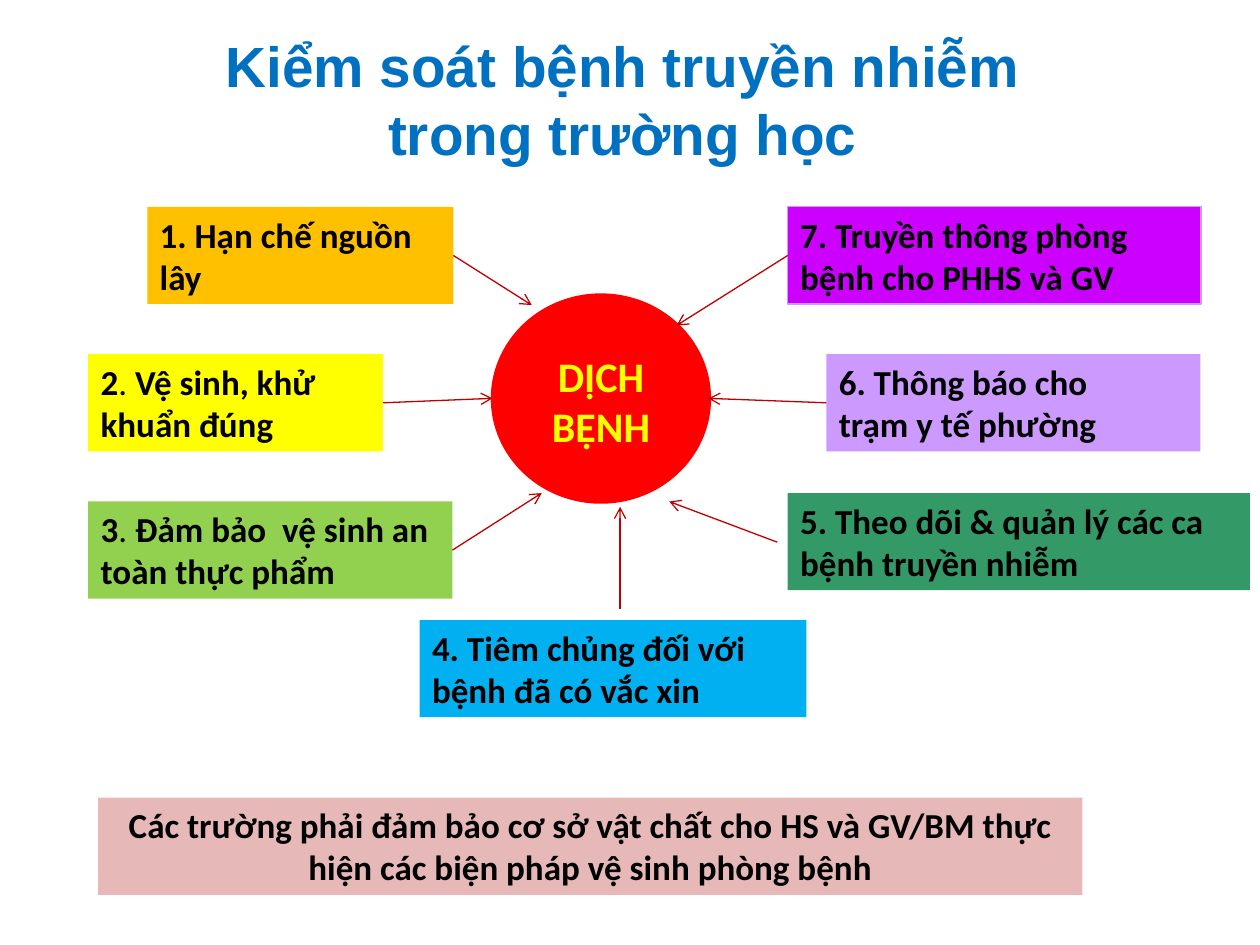
from dataclasses import dataclass

from lxml import etree
from pptx import Presentation
from pptx import util as u
from pptx.dml.color import RGBColor
from pptx.enum import shapes, text
from pptx.oxml.ns import qn


@dataclass(frozen=True)
class Theme:
    title_font: str = "Arial"
    body_font: str = "Calibri"
    title_size: float = 32.4
    hub_size: int = 24
    body_size: int = 20
    title: str = "0070C0"
    ink: str = "000000"
    hub: str = "FF0000"
    hub_text: str = "FFFF00"
    arrow: str = "C00000"
    outline: str = "CC99FF"
    footer: str = "E6B9B8"


THEME = Theme()
CARD_HEIGHT = 1.96
RIGHT, LEFT = 3, 1
LINE_BREAK = "\n"

MEASURES = [
    dict(place=(1.19, 0, 6.17), fill="FFC000", side=RIGHT, tip=(8.94, 1.98),
         lines=[["1. Hạn chế nguồn lây"]]),
    dict(place=(0, 2.97, 5.94), fill="FFFF00", side=RIGHT, tip=(8.15, 3.86),
         lines=[["2", ". ", "Vệ sinh, khử khuẩn đúng"]]),
    dict(place=(0, 5.94, 7.34), fill="92D050", side=RIGHT, tip=(9.14, 5.77),
         lines=[["3", ". ", "Đảm bảo  vệ sinh an toàn thực phẩm"]]),
    dict(place=(6.68, 8.33, 7.8), fill="00B0F0", start=(10.72, 8.1), tip=(10.72, 6.05),
         lines=[["4. Tiêm chủng đối với bệnh đã có vắc xin"]]),
    dict(place=(14.1, 5.77, 9.32), fill="339966", start=(13.89, 6.76), tip=(11.71, 5.94),
         lines=[["5. Theo dõi & quản lý các ca bệnh truyền nhiễm"]]),
    dict(place=(14.88, 2.97, 7.54), fill="CC99FF", side=LEFT, tip=(12.5, 3.86),
         lines=[["6. Thông báo cho"], ["trạm y tế phường"]]),
    dict(place=(14.1, 0, 8.33), fill="CC00FF", outline=THEME.outline, side=LEFT,
         tip=(11.86, 2.39), lines=[["7. Truyền thông phòng bệnh cho PHHS và GV"]]),
]


def write(shape, lines, color=THEME.ink, size=THEME.body_size, name=THEME.body_font,
          align=text.PP_ALIGN.LEFT, anchor=text.MSO_ANCHOR.TOP):
    frame = shape.text_frame
    frame.word_wrap = True
    frame.vertical_anchor = anchor
    for index, pieces in enumerate(lines):
        para = frame.paragraphs[0] if index == 0 else frame.add_paragraph()
        para.alignment = align
        for piece in pieces:
            if piece == LINE_BREAK:
                para.add_line_break()
                continue
            span = para.add_run()
            span.text = piece
            font_format = {"name": name, "size": u.Pt(size), "bold": piece != ". "}
            for key, value in font_format.items():
                setattr(span.font, key, value)
            span.font.color.rgb = RGBColor.from_string(color)


def add_filled(page, kind, place, fill, outline=None, width=0.75):
    shape = page.shapes.add_shape(kind, *map(u.Cm, place))
    shape.shadow.inherit = False
    shape.fill.solid()
    shape.fill.fore_color.rgb = RGBColor.from_string(fill)
    if outline:
        shape.line.color.rgb = RGBColor.from_string(outline)
        shape.line.width = u.Pt(width)
    else:
        shape.line.fill.background()
    return shape


def add_arrow(page, start, tip):
    arrow = page.shapes.add_connector(shapes.MSO_CONNECTOR.STRAIGHT, *map(u.Cm, start + tip))
    arrow.line.color.rgb = RGBColor.from_string(THEME.arrow)
    arrow.line.width = u.Pt(0.75)
    outline = arrow._element.spPr.find(qn("a:ln"))
    etree.SubElement(outline, qn("a:tailEnd"), type="arrow")
    etree.SubElement(arrow._element.spPr, qn("a:effectLst"))
    return arrow


def add_title(page, box):
    title = page.shapes.add_textbox(*map(u.Cm, box))
    write(title, [["Kiểm soát bệnh truyền nhiễm", LINE_BREAK, "trong trường học"]],
          THEME.title, THEME.title_size, THEME.title_font,
          text.PP_ALIGN.CENTER, text.MSO_ANCHOR.MIDDLE)


def add_hub(page, box):
    left, top, width, height = box
    add_filled(page, shapes.MSO_SHAPE.OVAL, box, THEME.hub, THEME.hub, 2)
    label = page.shapes.add_textbox(
        u.Cm(left + 0.2), u.Cm(top + 0.99), u.Cm(width - 0.4), u.Cm(2.31))
    write(label, [["DỊCH BỆNH"]], THEME.hub_text, THEME.hub_size,
          align=text.PP_ALIGN.CENTER)


def add_measures(page, box):
    left, top = box[:2]

    def shift(point):
        return left + point[0], top + point[1]

    add_hub(page, (*shift((8.15, 1.78)), 4.37, 4.17))
    for measure in MEASURES:
        x, y, width = measure["place"]
        card = add_filled(page, shapes.MSO_SHAPE.RECTANGLE,
                          (*shift((x, y)), width, CARD_HEIGHT),
                          measure["fill"], measure.get("outline"))
        write(card, measure["lines"])
        side = measure.get("side")
        edge = (x + width if side == RIGHT else x, y + CARD_HEIGHT / 2)
        arrow = add_arrow(page, shift(measure.get("start", edge)), shift(measure["tip"]))
        if side:
            arrow.begin_connect(card, side)


def add_footer(page, box):
    footer = add_filled(page, shapes.MSO_SHAPE.RECTANGLE, box, THEME.footer)
    write(footer, [["Các trường phải đảm bảo cơ sở vật chất cho HS và GV/BM thực hiện "
                    "các biện pháp vệ sinh phòng bệnh"]], align=text.PP_ALIGN.CENTER)


def main():
    deck = Presentation()
    deck.slide_width, deck.slide_height = u.Cm(25.4), u.Cm(19.05)
    page = deck.slides.add_slide(deck.slide_layouts[6])
    add_title(page, (0.46, 0.41, 24.18, 3.18))
    add_measures(page, (1.78, 4.17, 23.42, 10.29))
    add_footer(page, (1.98, 16.08, 19.84, CARD_HEIGHT))
    deck.save("out.pptx")


if __name__ == "__main__":
    main()
